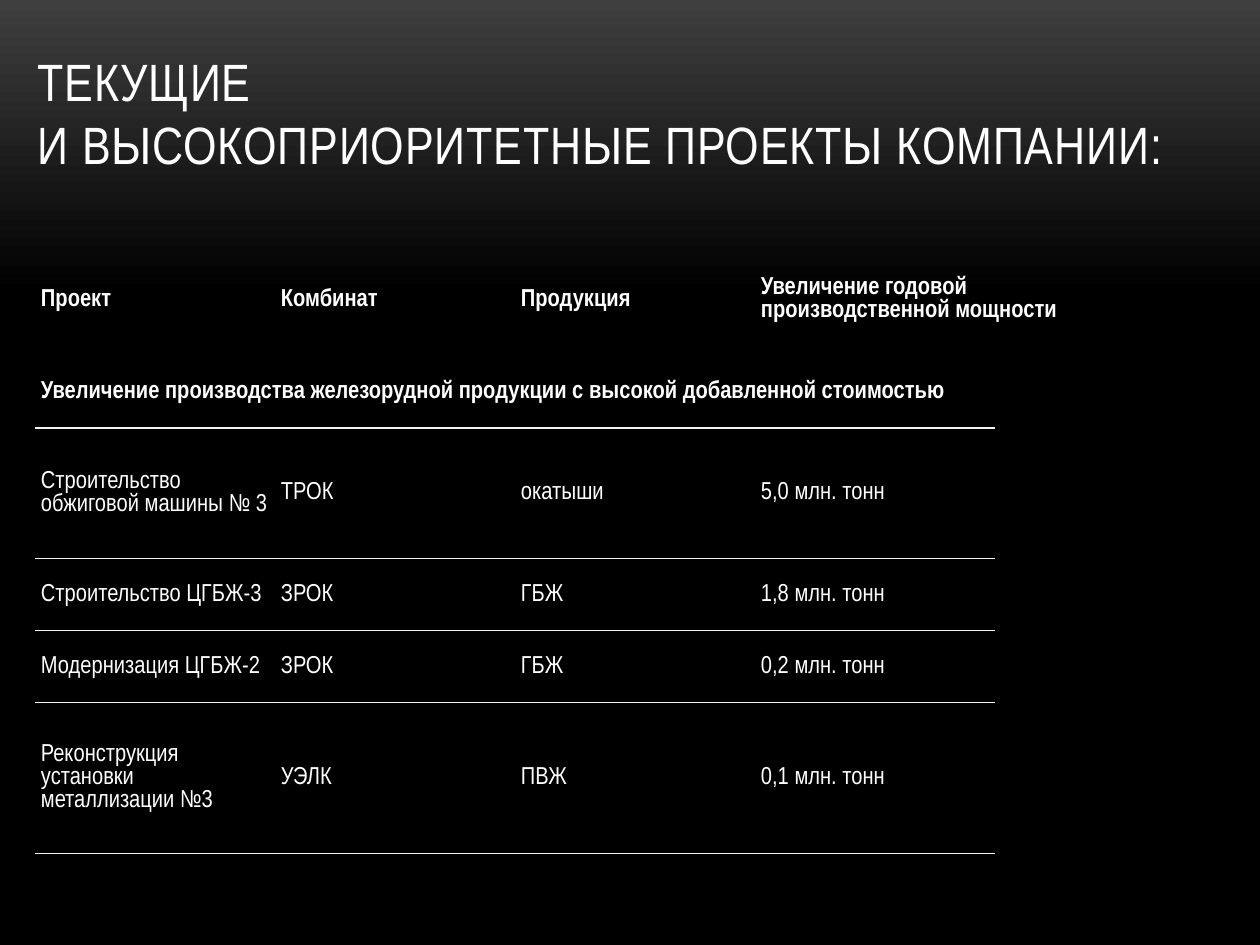
import copy
import pptx
import pptx.util
import pptx.dml.color
import pptx.enum.text
import pptx.oxml
import pptx.oxml.ns

PX = 914400 / 126
WHITE = "FFFFFF"
RULE = "F4F3F2"
FONT = "Arial Narrow"
NO_STYLE = "{2D5ABB26-0587-4C30-8999-92F81FD0307C}"
COLS = [240] * 4 + [54] * 3
ROWS = [112, 72, 131, 72, 72, 151]
TABLE = [
    ["Проект", "Комбинат", "Продукция", "Увеличение годовой \vпроизводственной мощности"],
    ["Увеличение производства железорудной продукции с высокой добавленной стоимостью"],
    ["Строительство обжиговой машины № 3", "ТРОК", "окатыши", "5,0 млн. тонн"],
    ["Строительство ЦГБЖ-3", "ЗРОК", "ГБЖ", "1,8 млн. тонн"],
    ["Модернизация ЦГБЖ-2", "ЗРОК", "ГБЖ", "0,2 млн. тонн"],
    ["Реконструкция установки металлизации №3", "УЭЛК", "ПВЖ", "0,1 млн. тонн"],
]


def px(n):
    return pptx.util.Emu(round(n * PX))


def rgb(value):
    return pptx.dml.color.RGBColor.from_string(value)


def apply(obj, values):
    for name, value in values.items():
        setattr(obj, name, value)


def style_paragraph(p, size, spacing, bold):
    apply(p, {"line_spacing": pptx.util.Pt(spacing),
              "alignment": pptx.enum.text.PP_ALIGN.LEFT})
    for r in p.runs:
        apply(r.font, {"name": FONT, "size": pptx.util.Pt(size), "bold": bold})
        r.font.color.rgb = rgb(WHITE)


def add_background(s):
    fill = s.background.fill
    fill.gradient()
    fill.gradient_angle = 270
    stops = s._element.xpath(".//a:gsLst")[0]
    stops.append(copy.deepcopy(stops[-1]))
    for stop, (position, color) in zip(fill.gradient_stops,
                                       [(0, "3F3F3F"), (0.31, "000000"), (1, "000000")]):
        stop.position = position
        stop.color.rgb = rgb(color)


def add_title(s, left, top, width, height):
    sp = s.shapes.title
    apply(sp, {"left": px(left), "top": px(top), "width": px(width), "height": px(height)})
    tf = sp.text_frame
    apply(tf, {"text": "ТЕКУЩИЕ \vИ ВЫСОКОПРИОРИТЕТНЫЕ ПРОЕКТЫ КОМПАНИИ:",
               "word_wrap": True,
               "auto_size": pptx.enum.text.MSO_AUTO_SIZE.NONE,
               "vertical_anchor": pptx.enum.text.MSO_ANCHOR.BOTTOM})
    style_paragraph(tf.paragraphs[0], 30, 36, False)
    for r in tf.paragraphs[0].runs:
        r.font._element.set("spc", "50")


def add_borders(cell, sides):
    tcPr = cell._tc.get_or_add_tcPr()
    ns = pptx.oxml.ns.nsdecls("a")
    for i, side in enumerate(sides):
        tcPr.insert(i, pptx.oxml.parse_xml(
            f'<a:{side} {ns} w="9525"><a:solidFill><a:srgbClr val="{RULE}"/>'
            f'</a:solidFill></a:{side}>'))


def add_projects(s, left, top):
    table = s.shapes.add_table(len(ROWS), len(COLS), px(left), px(top),
                               px(sum(COLS)), px(sum(ROWS))).table
    apply(table, {"first_row": False, "horz_banding": False})
    table._tbl.tblPr.find(pptx.oxml.ns.qn("a:tableStyleId")).text = NO_STYLE
    for column, width in zip(table.columns, COLS):
        column.width = px(width)
    for row, height in zip(table.rows, ROWS):
        row.height = px(height)
    table.cell(0, 3).merge(table.cell(0, 6))
    table.cell(1, 0).merge(table.cell(1, 3))
    margins = {f"margin_{side}": px(6) for side in ("left", "right", "top", "bottom")}
    for i, texts in enumerate(TABLE):
        for j in range(len(COLS)):
            cell = table.cell(i, j)
            cell.fill.background()
            apply(cell, {"vertical_anchor": pptx.enum.text.MSO_ANCHOR.MIDDLE, **margins})
            if j < len(texts):
                cell.text = texts[j]
                style_paragraph(cell.text_frame.paragraphs[0], 14, 13.2, i < 2)
            if i > 0 and j < 4:
                add_borders(cell, ["lnB"] if i == 1 else ["lnT", "lnB"])


def main():
    prs = pptx.Presentation()
    apply(prs, {"slide_width": px(1260), "slide_height": px(945)})
    s = prs.slides.add_slide(prs.slide_layouts[5])
    add_background(s)
    add_title(s, 25, 36, 1213, 145)
    add_projects(s, 35, 244)
    prs.save("out.pptx")


if __name__ == "__main__":
    main()
